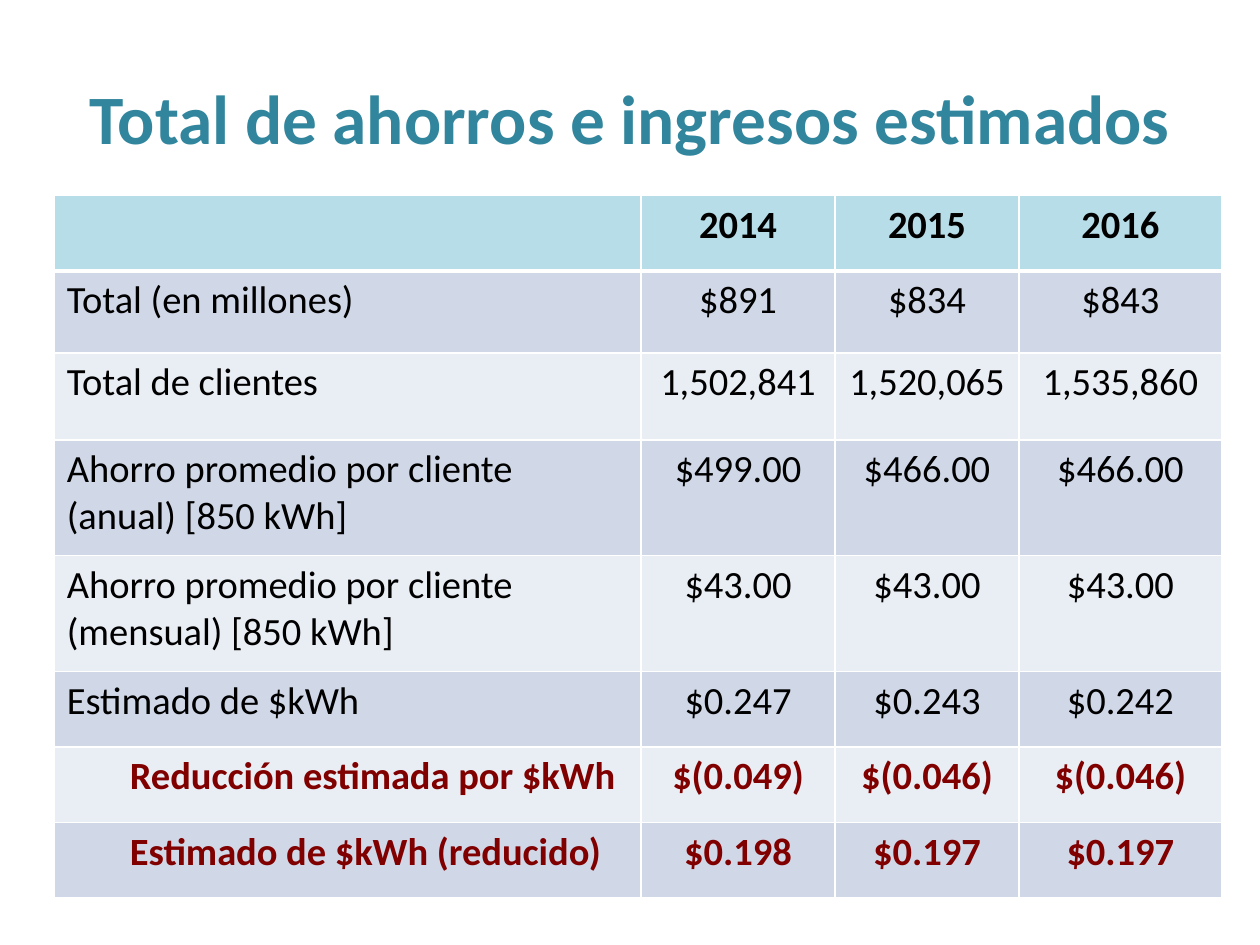
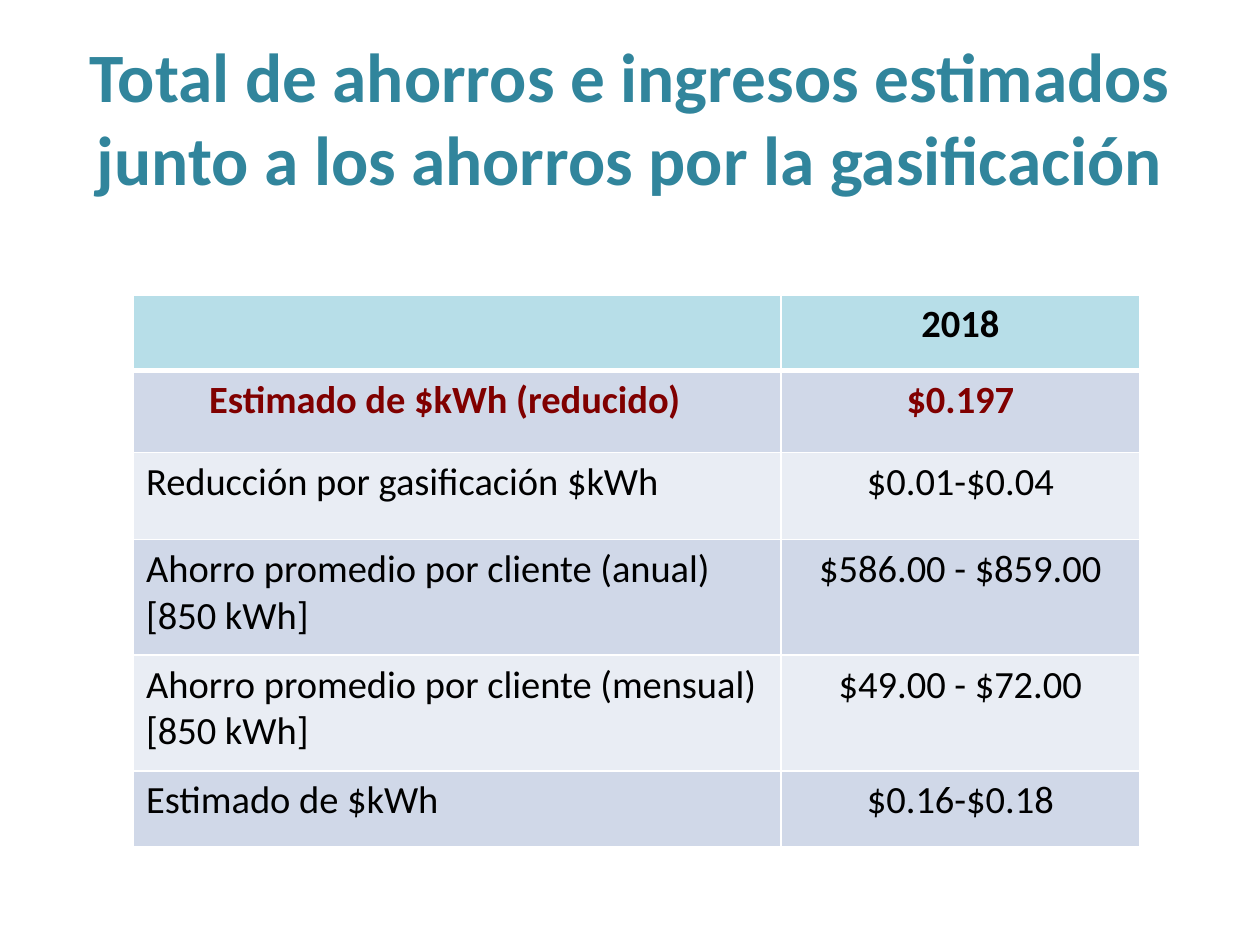
from lxml.etree import SubElement
from pptx import Presentation
from pptx.dml.color import RGBColor
from pptx.enum.text import MSO_ANCHOR, PP_ALIGN
from pptx.oxml.ns import qn
from pptx.util import Pt

TEAL = RGBColor(0x31, 0x85, 0x9C)
HEADER_BLUE = RGBColor(0xB7, 0xDE, 0xE8)
BAND_DARK = RGBColor(0xD0, 0xD8, 0xE8)
BAND_LIGHT = RGBColor(0xE9, 0xED, 0xF4)
MAROON = RGBColor(0x80, 0x00, 0x00)
BLACK = RGBColor(0x00, 0x00, 0x00)
WHITE = RGBColor(0xFF, 0xFF, 0xFF)

FONT = "Calibri"
REDUCED_RATE = "Estimado de $kWh (reducido)"
EMPHASIZED = {"Reducción estimada por $kWh", REDUCED_RATE}
ROW_HEIGHTS = [43.2, 46.8, 49.7, 66.2, 66.2, 43.2, 43.2, 43.2]


class Deck:
    def __init__(self):
        self.presentation = Presentation()
        self.presentation.slide_width = Pt(720)
        self.presentation.slide_height = Pt(540)
        self.slide = None

    def add_slide(self, heading):
        self.slide = self.presentation.slides.add_slide(self.presentation.slide_layouts[6])
        self.add_title(heading)

    def style(self, paragraph, size, color, bold, alignment):
        paragraph.alignment = alignment
        paragraph.font.name = FONT
        paragraph.font.size = Pt(size)
        paragraph.font.bold = bold
        paragraph.font.color.rgb = color

    def add_title(self, heading):
        title = self.slide.shapes.add_textbox(Pt(36), Pt(21.6), Pt(648), Pt(90)).text_frame
        title.word_wrap = True
        title.vertical_anchor = MSO_ANCHOR.MIDDLE
        title.text = heading
        self.style(title.paragraphs[0], 39.6, TEAL, True, PP_ALIGN.CENTER)

    def add_borders(self, cell, top, bottom):
        properties = cell._tc.get_or_add_tcPr()
        for side, width in (("L", 1), ("R", 1), ("T", top), ("B", bottom)):
            line = SubElement(properties, qn(f"a:ln{side}"), w=str(Pt(width)))
            fill = SubElement(line, qn("a:solidFill"))
            SubElement(fill, qn("a:srgbClr"), val=str(WHITE))

    def fill_cell(self, cell, text, row, column, emphasized):
        self.add_borders(cell, 3 if row == 1 else 1, 3 if row == 0 else 1)
        cell.fill.solid()
        cell.fill.fore_color.rgb = (
            HEADER_BLUE if row == 0 else BAND_DARK if row % 2 else BAND_LIGHT
        )
        cell.text = text
        paragraph = cell.text_frame.paragraphs[0]
        self.style(
            paragraph,
            22,
            MAROON if emphasized else BLACK,
            emphasized or row == 0,
            PP_ALIGN.CENTER if column else PP_ALIGN.LEFT,
        )
        if emphasized and column == 0:
            paragraph._p.get_or_add_pPr().set("marL", str(Pt(36)))

    def add_table(self, left, top, widths, rows):
        heights = ROW_HEIGHTS[:len(rows)]
        table = self.slide.shapes.add_table(
            len(rows), len(widths), Pt(left), Pt(top), Pt(sum(widths)), Pt(sum(heights))
        ).table
        for column, width in zip(table.columns, widths):
            column.width = Pt(width)
        for row, (height, texts) in enumerate(zip(heights, rows)):
            table.rows[row].height = Pt(height)
            for column, text in enumerate(texts):
                self.fill_cell(table.cell(row, column), text, row, column, texts[0] in EMPHASIZED)


def main():
    deck = Deck()

    deck.add_slide("Total de ahorros e ingresos estimados")
    deck.add_table(31, 111.6, [335.3, 110.9, 105.1, 115.9], [
        ("", "2014", "2015", "2016"),
        ("Total (en millones)", "$891", "$834", "$843"),
        ("Total de clientes", "1,502,841", "1,520,065", "1,535,860"),
        ("Ahorro promedio por cliente (anual) [850 kWh]", "$499.00", "$466.00", "$466.00"),
        ("Ahorro promedio por cliente (mensual) [850 kWh]", "$43.00", "$43.00", "$43.00"),
        ("Estimado de $kWh", "$0.247", "$0.243", "$0.242"),
        ("Reducción estimada por $kWh", "$(0.049)", "$(0.046)", "$(0.046)"),
        (REDUCED_RATE, "$0.198", "$0.197", "$0.197"),
    ])

    deck.add_slide("Total de ahorros e ingresos estimados junto a los ahorros por la gasificación")
    deck.add_table(76.3, 168.5, [370.1, 204.8], [
        ("", "2018"),
        (REDUCED_RATE, "$0.197"),
        ("Reducción por gasificación $kWh", "$0.01-$0.04"),
        ("Ahorro promedio por cliente (anual) [850 kWh]", "$586.00 - $859.00"),
        ("Ahorro promedio por cliente (mensual) [850 kWh]", "$49.00 - $72.00"),
        ("Estimado de $kWh", "$0.16-$0.18"),
    ])

    deck.presentation.save("out.pptx")


if __name__ == "__main__":
    main()
